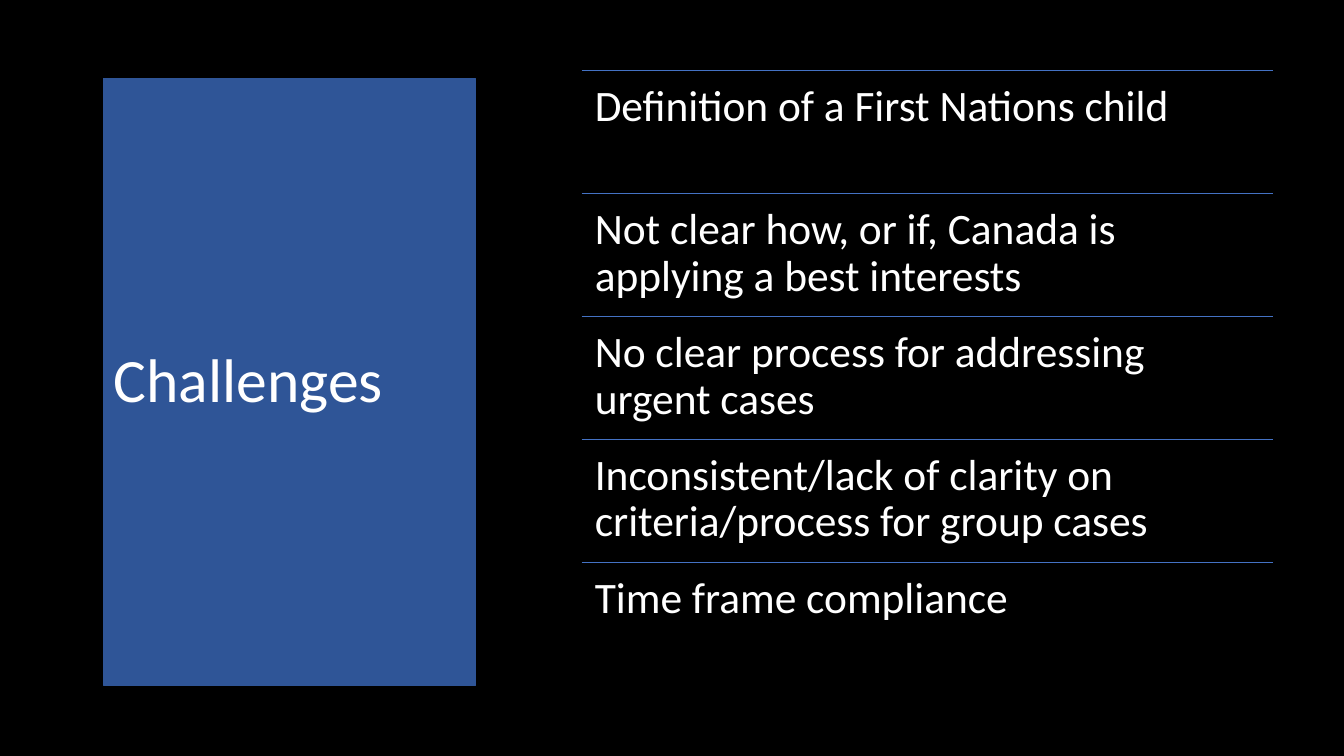
from lxml import etree
from pptx import Presentation
from pptx import util as u
from pptx.dml.color import RGBColor
from pptx.enum import shapes, text
from pptx.oxml.ns import qn

TITLE = "Challenges"
CHALLENGES = [
    "Definition of a First Nations child",
    "Not clear how, or if, Canada is applying a best interests",
    "No clear process for addressing urgent cases",
    "Inconsistent/lack of clarity on criteria/process for group cases",
    "Time frame compliance",
]
COLORS = {"background": "000000", "panel": "2F5597", "rule": "4472C4", "text": "FFFFFF"}
FONT = "Calibri"
SLIDE_SIZE = (13.33, 7.5)
PANEL = (1.03, 0.78, 3.69, 6.02)
LIST_LEFT, LIST_TOP, LIST_WIDTH, ROW_HEIGHT = 5.77, 0.7, 6.86, 1.22
INSET = 0.13


def color(name):
    return RGBColor.from_string(COLORS[name])


def inches(*lengths):
    return [u.Inches(length) for length in lengths]


def write(shape, words, size, anchor):
    frame = shape.text_frame
    frame.text = words
    frame.word_wrap = True
    frame.vertical_anchor = anchor
    paragraph = frame.paragraphs[0]
    paragraph.alignment = text.PP_ALIGN.LEFT
    paragraph.line_spacing = 0.9
    font = paragraph.runs[0].font
    font.name, font.size = FONT, u.Pt(size)
    font.color.rgb = color("text")


def add_panel(slide):
    panel = slide.shapes.add_shape(shapes.MSO_SHAPE.RECTANGLE, *inches(*PANEL))
    panel.shadow.inherit = False
    panel.fill.solid()
    panel.fill.fore_color.rgb = color("panel")
    panel.line.color.rgb = color("panel")
    panel.line.width = u.Pt(0.75)
    write(panel, TITLE, 44, text.MSO_ANCHOR.MIDDLE)


def add_challenge(slide, words, top):
    """Add one list row: a rule along its top edge and the text below."""
    rule = slide.shapes.add_connector(
        shapes.MSO_CONNECTOR.STRAIGHT,
        *inches(LIST_LEFT, top, LIST_LEFT + LIST_WIDTH, top))
    rule.line.color.rgb = color("rule")
    rule.line.width = u.Pt(1)
    etree.SubElement(rule._element.spPr, qn("a:effectLst"))

    box = slide.shapes.add_textbox(*inches(LIST_LEFT, top, LIST_WIDTH, ROW_HEIGHT))
    frame = box.text_frame
    frame.margin_left = frame.margin_right = u.Inches(INSET)
    frame.margin_top = frame.margin_bottom = u.Inches(INSET)
    write(box, words, 31, text.MSO_ANCHOR.TOP)


def main():
    presentation = Presentation()
    presentation.slide_width, presentation.slide_height = inches(*SLIDE_SIZE)
    slide = presentation.slides.add_slide(presentation.slide_layouts[6])
    slide.background.fill.solid()
    slide.background.fill.fore_color.rgb = color("background")
    add_panel(slide)
    for row, words in enumerate(CHALLENGES):
        add_challenge(slide, words, LIST_TOP + row * ROW_HEIGHT)
    presentation.save("out.pptx")


if __name__ == "__main__":
    main()
